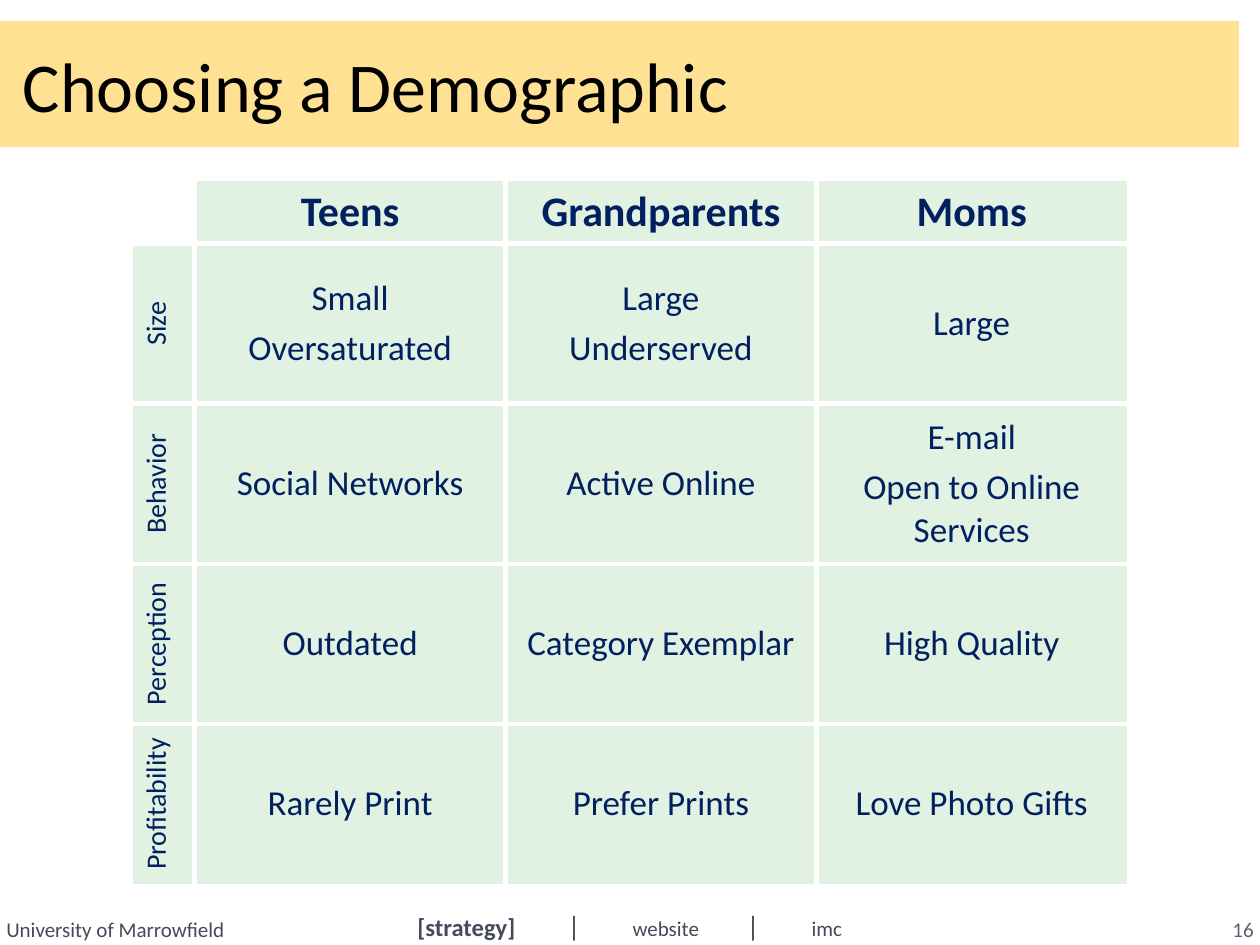
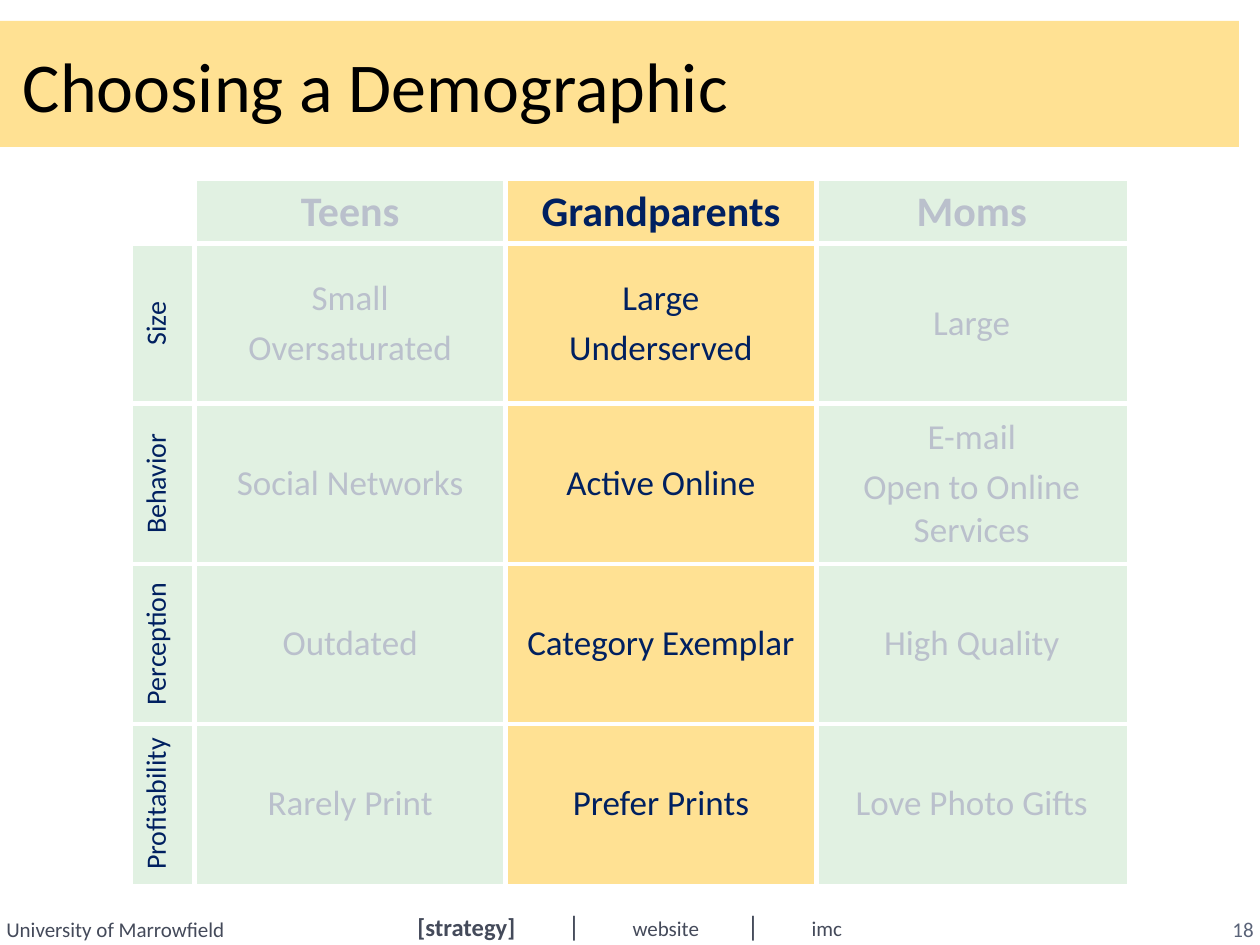
import dataclasses

import lxml.etree
import pptx
import pptx.dml.color
import pptx.enum.shapes
import pptx.enum.text
import pptx.oxml.ns
import pptx.util

Pt = pptx.util.Pt
Align = pptx.enum.text.PP_ALIGN
Anchor = pptx.enum.text.MSO_ANCHOR
qn = pptx.oxml.ns.qn

FONT = "Calibri"
COLORS = {
    "band": "FFE193",
    "cell": "E1F1E2",
    "white": "FFFFFF",
    "title": "000000",
    "navy": "002060",
    "faded": "BAC0CC",
    "footer": "444A5A",
    "number": "5A6378",
}


@dataclasses.dataclass(frozen=True)
class Style:
    size: float
    color: str
    bold: bool = False


@dataclasses.dataclass(frozen=True)
class Label:
    text: str
    left: float
    top: float
    width: float
    height: float
    style: Style
    align: Align = Align.LEFT
    inset: float = 3.6


@dataclasses.dataclass(frozen=True)
class Crumb:
    text: str
    center: float
    style: Style


@dataclasses.dataclass(frozen=True)
class DemographicPage:
    number: str
    chosen: str | None = None


SMALL = Style(12, "footer")
BAR = Style(16, "footer")
TITLE = Label("Choosing a Demographic", 6, 6, 708, 84, Style(40, "title"), inset=7.2)
SCHOOL = Label("University of Marrowfield", 0, 522, 330, 18, SMALL)
TRAIL = Label("", 0, 517, 720, 24, SMALL)
CRUMBS = [
    Crumb("[strategy]", 266.5, Style(14, "footer", True)),
    Crumb("|", 328, BAR),
    Crumb("website", 380.5, SMALL),
    Crumb("|", 430.3, BAR),
    Crumb("imc", 472.5, SMALL),
]

GROUPS = ["Teens", "Grandparents", "Moms"]
CRITERIA = {
    "Size": [["Small", "Oversaturated"], ["Large", "Underserved"], ["Large"]],
    "Behavior": [["Social Networks"], ["Active Online"], ["E-mail", "Open to Online Services"]],
    "Perception": [["Outdated"], ["Category Exemplar"], ["High Quality"]],
    "Profitability": [["Rarely Print"], ["Prefer Prints"], ["Love Photo Gifts"]],
}
TABLE_LEFT, TABLE_TOP = 75.9, 103.2
HEAD_WIDTH, GROUP_WIDTH = 35.4, 177.6
HEAD_HEIGHT, CRITERION_HEIGHT = 35.4, 91.5
BORDER_WIDTH = 3

PAGES = [DemographicPage("16"), DemographicPage("18", "Grandparents")]


def rgb(name: str) -> pptx.dml.color.RGBColor:
    return pptx.dml.color.RGBColor.from_string(COLORS[name])


def add_span(para, text: str, style: Style) -> None:
    span = para.add_run()
    span.text = text
    span.font.name = FONT
    span.font.size = Pt(style.size)
    span.font.bold = style.bold
    span.font.color.rgb = rgb(style.color)


def add_label(page, label: Label):
    box = page.shapes.add_textbox(
        Pt(label.left), Pt(label.top), Pt(label.width), Pt(label.height)
    )
    frame = box.text_frame
    frame.word_wrap = True
    frame.vertical_anchor = Anchor.MIDDLE
    frame.margin_left = frame.margin_right = Pt(label.inset)
    frame.margin_top = frame.margin_bottom = Pt(3.6)
    para = frame.paragraphs[0]
    para.alignment = label.align
    if label.text:
        add_span(para, label.text, label.style)
    return para


def add_trail(page) -> None:
    para = add_label(page, TRAIL)
    stops = lxml.etree.SubElement(para._p.get_or_add_pPr(), qn("a:tabLst"))
    for crumb in CRUMBS:
        position = Pt(crumb.center - TRAIL.inset)
        lxml.etree.SubElement(stops, qn("a:tab"), pos=str(int(position)), algn="ctr")
        add_span(para, "\t" + crumb.text, crumb.style)


def add_frame(page, number: str) -> None:
    add_label(page, SCHOOL)
    band = page.shapes.add_shape(
        pptx.enum.shapes.MSO_SHAPE.RECTANGLE, Pt(0), Pt(12), Pt(708), Pt(72)
    )
    band.shadow.inherit = False
    band.fill.solid()
    band.fill.fore_color.rgb = rgb("band")
    band.line.fill.background()
    add_trail(page)
    add_label(page, TITLE)
    add_label(page, Label(number, 654, 522, 66, 18, Style(12, "number"), Align.RIGHT))


def set_borders(cell, inner_sides: dict[str, bool]) -> None:
    properties = cell._tc.get_or_add_tcPr()
    for side, inner in inner_sides.items():
        line = lxml.etree.SubElement(
            properties, qn(f"a:ln{side}"), w=str(int(Pt(BORDER_WIDTH)))
        )
        if inner:
            fill = lxml.etree.SubElement(line, qn("a:solidFill"))
            lxml.etree.SubElement(fill, qn("a:srgbClr"), val=COLORS["white"])
        else:
            lxml.etree.SubElement(line, qn("a:noFill"))


def fill_cell(cell, lines: list[str], style: Style, fill: str) -> None:
    cell.fill.solid()
    cell.fill.fore_color.rgb = rgb(fill)
    cell.vertical_anchor = Anchor.MIDDLE
    frame = cell.text_frame
    for index, line in enumerate(lines):
        para = frame.add_paragraph() if index else frame.paragraphs[0]
        para.alignment = Align.CENTER
        spacing = lxml.etree.SubElement(para._p.get_or_add_pPr(), qn("a:spcBef"))
        lxml.etree.SubElement(spacing, qn("a:spcPct"), val="20000")
        add_span(para, line, style)


def add_comparison(page, chosen: str | None) -> None:
    rows = [[[]] + [[group] for group in GROUPS]]
    rows += [[[name]] + cells for name, cells in CRITERIA.items()]
    widths = [HEAD_WIDTH] + [GROUP_WIDTH] * len(GROUPS)
    heights = [HEAD_HEIGHT] + [CRITERION_HEIGHT] * len(CRITERIA)
    table = page.shapes.add_table(
        len(rows), len(widths), Pt(TABLE_LEFT), Pt(TABLE_TOP), Pt(sum(widths)), Pt(sum(heights))
    ).table
    table.first_row = table.horz_banding = False
    for column, width in zip(table.columns, widths):
        column.width = Pt(width)
    for row, height in zip(table.rows, heights):
        row.height = Pt(height)

    for r, row in enumerate(rows):
        for c, lines in enumerate(row):
            cell = table.cell(r, c)
            set_borders(cell, {
                "L": c > 0, "R": c < len(widths) - 1,
                "T": r > 0, "B": r < len(rows) - 1,
            })
            is_chosen = c > 0 and GROUPS[c - 1] == chosen
            is_faded = c > 0 and chosen is not None and not is_chosen
            size = 24 if r == 0 else 16 if c == 0 else 20
            style = Style(size, "faded" if is_faded else "navy", r == 0)
            fill = "band" if is_chosen else "cell" if lines else "white"
            fill_cell(cell, lines, style, fill)
            if c == 0 and lines:
                cell._tc.get_or_add_tcPr().set("vert", "vert270")


def main() -> None:
    deck = pptx.Presentation()
    deck.slide_width, deck.slide_height = Pt(720), Pt(540)
    for demographic in PAGES:
        page = deck.slides.add_slide(deck.slide_layouts[6])
        add_frame(page, demographic.number)
        add_comparison(page, demographic.chosen)
    deck.save("out.pptx")


if __name__ == "__main__":
    main()
